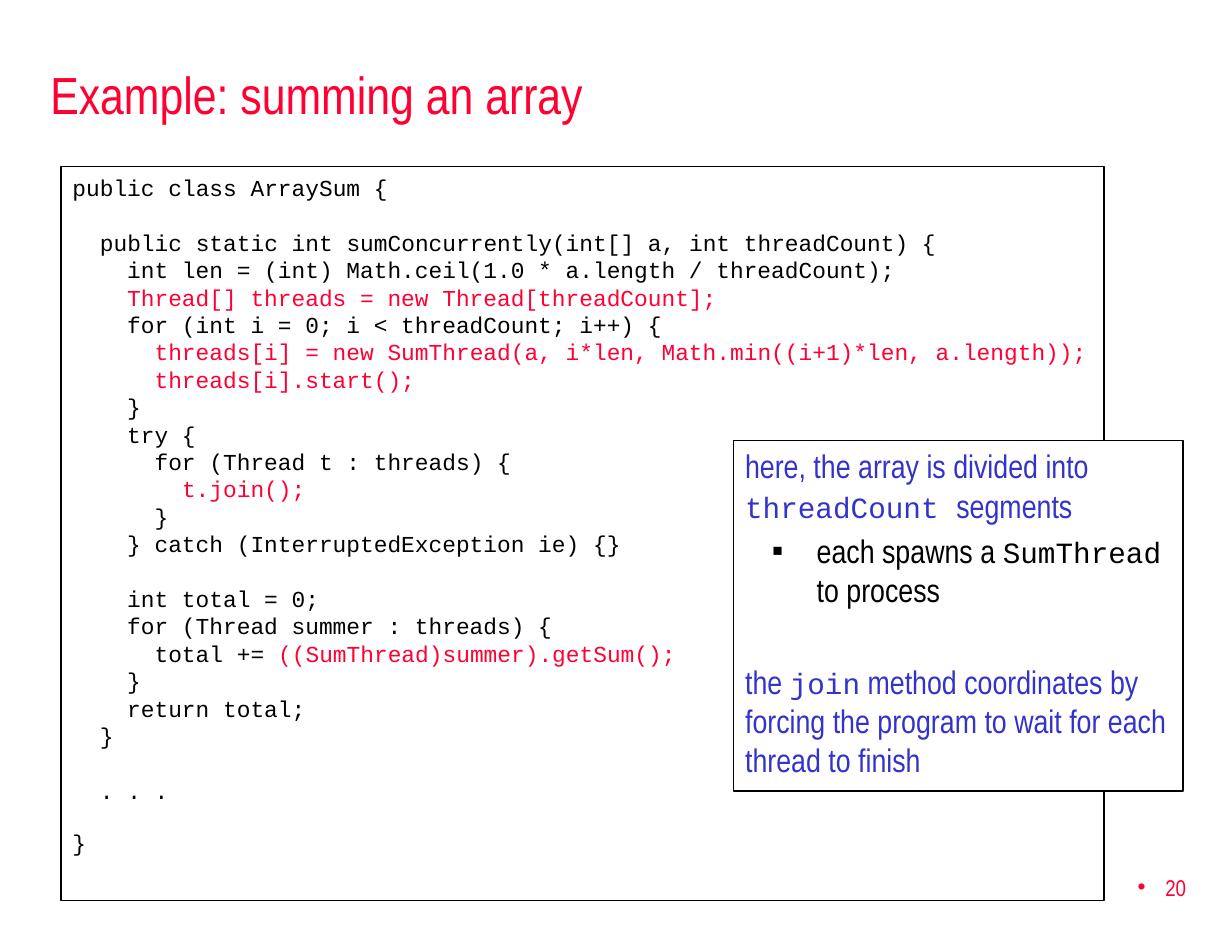
from lxml import etree
from pptx import Presentation
from pptx.dml.color import RGBColor
from pptx.enum import shapes, text
from pptx.oxml import ns
from pptx.util import Cm, Pt

THEME = {
    "red": "FF0033", "blue": "3333CC", "black": "000000", "white": "FFFFFF",
    "sans": "Arial Narrow", "mono": "Courier New",
    "title": 32, "code": 14, "note": 20, "term": 18, "page": 14,
    "pitch": 16.8,  # code line height and width of one two-space step, points
}

TITLE = "Example: summing an array"
PAGE = "20"

# (level, blank line above, plain part, highlighted part)
CODE = [
    (0, False, "public class ArraySum {", ""),
    (1, True, "public static int sumConcurrently(int[] a, int threadCount) {", ""),
    (2, False, "int len = (int) Math.ceil(1.0 * a.length / threadCount);", ""),
    (2, False, "", "Thread[] threads = new Thread[threadCount];"),
    (2, False, "for (int i = 0; i < threadCount; i++) {", ""),
    (3, False, "", "threads[i] = new SumThread(a, i*len, Math.min((i+1)*len, a.length));"),
    (3, False, "", "threads[i].start();"),
    (2, False, "}", ""),
    (2, False, "try {", ""),
    (3, False, "for (Thread t : threads) {", ""),
    (4, False, "", "t.join();"),
    (3, False, "}", ""),
    (2, False, "} catch (InterruptedException ie) {}", ""),
    (2, True, "int total = 0;", ""),
    (2, False, "for (Thread summer : threads) {", ""),
    (3, False, "total += ", "((SumThread)summer).getSum();"),
    (2, False, "}", ""),
    (2, False, "return total;", ""),
    (1, False, "}", ""),
    (1, True, ". . .", ""),
    (0, True, "}", ""),
]

# (colour, space above in points, bulleted, [before, code term, after])
NOTES = [
    ("blue", 4, False, ["here, the array is divided into ", "threadCount ", "segments"]),
    ("black", 4, True, ["each spawns a ", "SumThread ", "to process"]),
    ("blue", 32, False, ["the ", "join", " method coordinates by forcing the "
                         "program to wait for each thread to finish"]),
]

# left, top, width, height in cm
PLACES = {
    "title": (0.84, 1.07, 25.2, 1.9),
    "code": (1.32, 3.61, 22.58, 15.88),
    "note": (15.88, 9.53, 9.73, 7.59),
    "page": (20.37, 18.52, 5.56, 1.35),
}


def rgb(name):
    return RGBColor.from_string(THEME[name])


def place(name):
    return [Cm(v) for v in PLACES[name]]


def frame(shape, **extra):
    look = {"word_wrap": True, "auto_size": text.MSO_AUTO_SIZE.NONE,
            "vertical_anchor": text.MSO_ANCHOR.TOP,
            "margin_left": Cm(0.25), "margin_right": Cm(0.25),
            "margin_top": Cm(0.13), "margin_bottom": Cm(0.13), **extra}
    for key, val in look.items():
        setattr(shape.text_frame, key, val)
    return shape.text_frame


def box(slide, name, fill=None):
    shape = slide.shapes.add_shape(shapes.MSO_SHAPE.RECTANGLE, *place(name))
    shape.shadow.inherit = False
    if fill:
        shape.fill.solid()
        shape.fill.fore_color.rgb = rgb(fill)
    else:
        shape.fill.background()
    shape.line.color.rgb = rgb("black")
    shape.line.width = Pt(0.75)
    return shape


def para(tf, first, **look):
    p = tf.paragraphs[0] if first else tf.add_paragraph()
    for key, val in {"alignment": text.PP_ALIGN.LEFT, **look}.items():
        setattr(p, key, val)
    return p


def run(p, words, font, size, color):
    r = p.add_run()
    r.text = words
    for key, val in {"name": THEME[font], "size": Pt(THEME[size])}.items():
        setattr(r.font, key, val)
    r.font.color.rgb = rgb(color)


def bullet(p, char, left, hang):
    props = p._p.get_or_add_pPr()
    props.set("marL", str(Cm(left)))
    props.set("indent", str(-Cm(hang)))
    etree.SubElement(props, ns.qn("a:buFont")).set("typeface", "Arial")
    etree.SubElement(props, ns.qn("a:buChar")).set("char", char)


def add_title(slide):
    shape = slide.shapes.title
    shape.left, shape.top, shape.width, shape.height = place("title")
    tf = frame(shape, vertical_anchor=text.MSO_ANCHOR.MIDDLE)
    run(para(tf, True), TITLE, "sans", "title", "red")


def add_code(slide):
    tf = frame(box(slide, "code"), margin_top=Cm(0.15))
    pitch = THEME["pitch"]
    last = len(CODE) - 1
    for i, (level, gap, plain, marked) in enumerate(CODE):
        p = para(tf, i == 0, space_before=Pt(pitch if gap else 0),
                 line_spacing=Pt(pitch * (0.9 if i == last else 1)))
        p._p.get_or_add_pPr().set("marL", str(Pt(level * pitch)))
        for words, color in ((plain, "black"), (marked, "red")):
            if words:
                run(p, words, "mono", "code", color)


def add_notes(slide):
    tf = frame(box(slide, "note", "white"))
    for i, (color, gap, dotted, parts) in enumerate(NOTES):
        p = para(tf, i == 0, space_before=Pt(gap))
        if dotted:
            bullet(p, "▪", 1.55, 0.97)
        for words, font, size in zip(parts, ("sans", "mono", "sans"),
                                     ("note", "term", "note")):
            run(p, words, font, size, color)


def add_page(slide):
    tf = frame(slide.shapes.add_textbox(*place("page")),
               vertical_anchor=text.MSO_ANCHOR.MIDDLE)
    p = para(tf, True, alignment=text.PP_ALIGN.RIGHT)
    bullet(p, "•", 0.6, 0.6)
    run(p, PAGE, "sans", "page", "red")


def main():
    deck = Presentation()
    deck.slide_width, deck.slide_height = Cm(26.67), Cm(20.32)
    slide = deck.slides.add_slide(deck.slide_layouts[5])
    for add in (add_title, add_code, add_page, add_notes):
        add(slide)
    deck.save("out.pptx")


if __name__ == "__main__":
    main()
